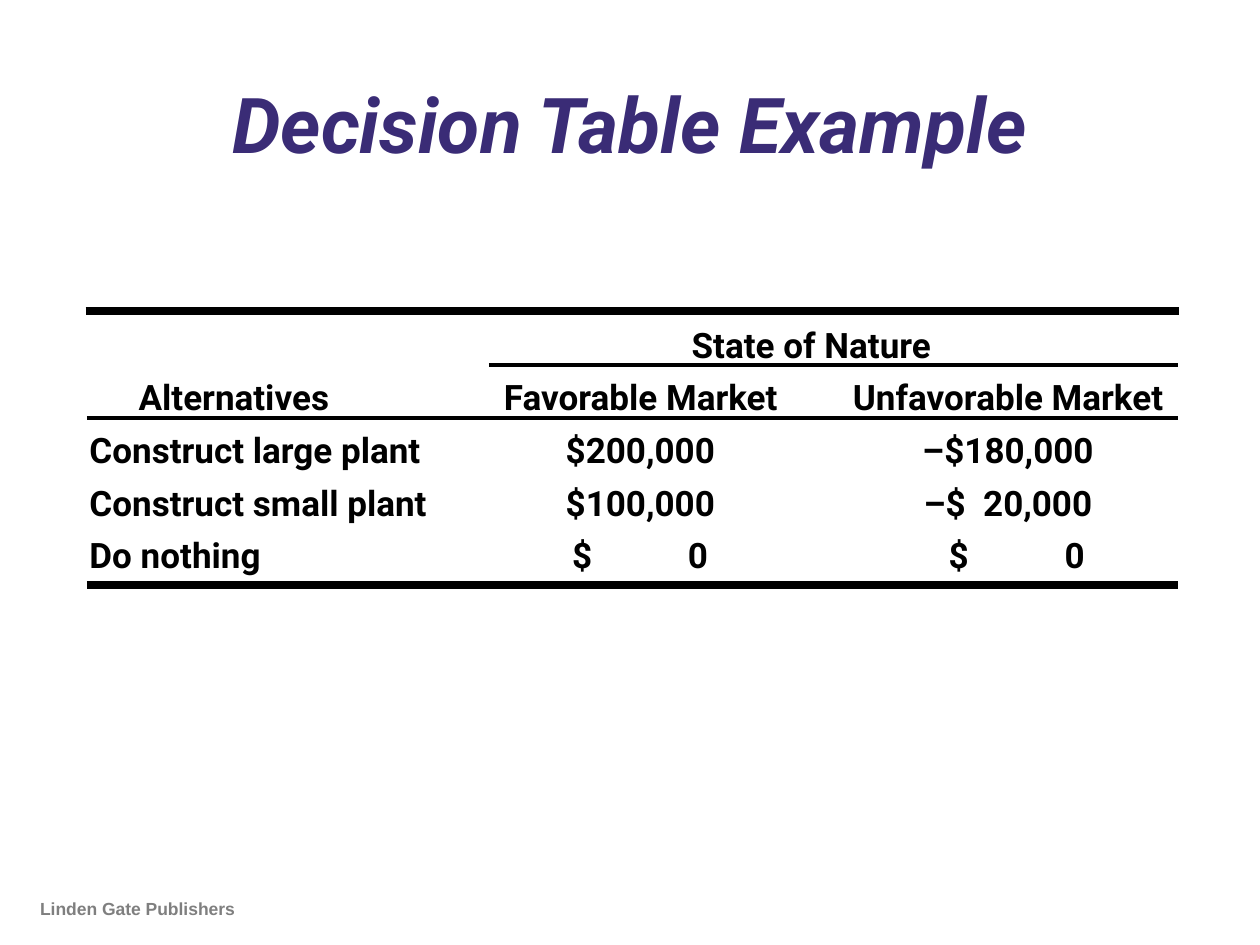
from lxml.etree import SubElement
from pptx import Presentation
from pptx.dml.color import RGBColor
from pptx.enum.shapes import MSO_CONNECTOR as Connector
from pptx.enum.text import MSO_ANCHOR as Anchor, PP_ALIGN as Align
from pptx.oxml.ns import qn
from pptx.util import Emu, Inches, Pt

# Content: each cell is (text, left indent, right tab stop or None), in inches
TITLE = "Decision Table Example"
FOOTER = "Linden Gate Publishers"
ROWS = [
    [("", 0, None), ("State of Nature", 1.61, None), ("", 0, None)],
    [("Alternatives", 0.41, None), ("Favorable Market", 0.12, None),
     ("Unfavorable Market", 0.12, None)],
    [("Construct large plant", 0.02, None), ("$200,000", 0.61, None),
     ("–$180,000", 0.67, None)],
    [("Construct small plant", 0.02, None), ("$100,000", 0.61, None),
     ("–$\t20,000", 0.68, 1.34)],
    [("Do nothing", 0.02, None), ("$\t0", 0.66, 1.08), ("$\t0", 0.88, 1.08)],
]
COLORS = {"title": "3A2C76", "text": "000000", "footer": "7F7F7F", "rule": "000000"}

# Layout in inches
SLIDE_WIDTH, SLIDE_HEIGHT = 10, 7.5
TABLE_LEFT, TABLE_TOP = 0.69, 2.48
COLUMN_WIDTHS = [3.19, 2.77, 2.7]
ROW_HEIGHTS = [0.43, 0.42, 0.42, 0.42, 0.46]
LAST_ROW_PADDING = 0.05
TABLE_RIGHT = TABLE_LEFT + sum(COLUMN_WIDTHS)

# Horizontal rules: (height on the slide, first column, overhang, points)
RULES = [(2.47, 0, 0.01, 4.5), (2.9, 1, 0, 2.25), (3.32, 0, 0, 2.25), (4.64, 0, 0, 4.5)]
NO_STYLE = "{2D5ABB26-0587-4C30-8999-92F81FD0307C}"

FORMATS = {
    "title": {"name": "Roboto", "size": Pt(44), "bold": True, "italic": True},
    "text": {"name": "Roboto", "size": Pt(20), "bold": True},
    "footer": {"name": "Arial", "size": Pt(10), "bold": True},
}


def write(frame, text, role):
    paragraph = frame.paragraphs[0]
    run = paragraph.add_run()
    run.text = text
    for name, value in FORMATS[role].items():
        setattr(run.font, name, value)
    run.font.color.rgb = RGBColor.from_string(COLORS[role])
    return paragraph


def add_text(slide, box, text, role):
    frame = slide.shapes.add_textbox(*map(Inches, box)).text_frame
    frame.word_wrap = True
    return frame, write(frame, text, role)


def add_tab_stop(paragraph, position):
    tabs = SubElement(paragraph._p.get_or_add_pPr(), qn("a:tabLst"))
    SubElement(tabs, qn("a:tab"), pos=str(Inches(position)), algn="r")


def add_rule(slide, y, first_column, overhang, points):
    left = TABLE_LEFT + sum(COLUMN_WIDTHS[:first_column]) - overhang
    ends = (left, y, TABLE_RIGHT + overhang, y)
    rule = slide.shapes.add_connector(Connector.STRAIGHT, *map(Inches, ends))
    rule.line.width = Pt(points)
    rule.line.color.rgb = RGBColor.from_string(COLORS["rule"])
    SubElement(rule._element.spPr, qn("a:effectLst"))


def add_decision_table(slide):
    box = (TABLE_LEFT, TABLE_TOP, sum(COLUMN_WIDTHS), sum(ROW_HEIGHTS))
    table = slide.shapes.add_table(
        len(ROWS), len(COLUMN_WIDTHS), *map(Inches, box)).table
    table.first_row = table.horz_banding = False
    table._tbl.tblPr.find(qn("a:tableStyleId")).text = NO_STYLE
    for column, width in zip(table.columns, COLUMN_WIDTHS):
        column.width = Inches(width)
    for row, height in zip(table.rows, ROW_HEIGHTS):
        row.height = Inches(height)
    table.cell(0, 1).merge(table.cell(0, 2))

    for row, values in enumerate(ROWS):
        padding = LAST_ROW_PADDING if row == len(ROWS) - 1 else 0
        for column, (text, indent, tab_stop) in enumerate(values):
            cell = table.cell(row, column)
            layout = {"margin_left": Inches(indent), "margin_right": Emu(0),
                      "margin_top": Emu(0), "margin_bottom": Inches(padding),
                      "vertical_anchor": Anchor.BOTTOM}
            for name, value in layout.items():
                setattr(cell, name, value)
            cell.fill.background()
            if text:
                paragraph = write(cell.text_frame, text, "text")
                if tab_stop:
                    add_tab_stop(paragraph, tab_stop)


def main():
    presentation = Presentation()
    presentation.slide_width = Inches(SLIDE_WIDTH)
    presentation.slide_height = Inches(SLIDE_HEIGHT)
    slide = presentation.slides.add_slide(presentation.slide_layouts[6])

    # Title
    frame, paragraph = add_text(slide, (0.75, 0.47, 8.5, 1.1), TITLE, "title")
    frame.vertical_anchor = Anchor.MIDDLE
    paragraph.alignment = Align.CENTER
    paragraph.line_spacing = 0.9

    # Decision table and its rules
    add_decision_table(slide)
    for rule in RULES:
        add_rule(slide, *rule)

    # Footer
    add_text(slide, (0.22, 7.08, 4.14, 0.28), FOOTER, "footer")

    presentation.save("out.pptx")


if __name__ == "__main__":
    main()
